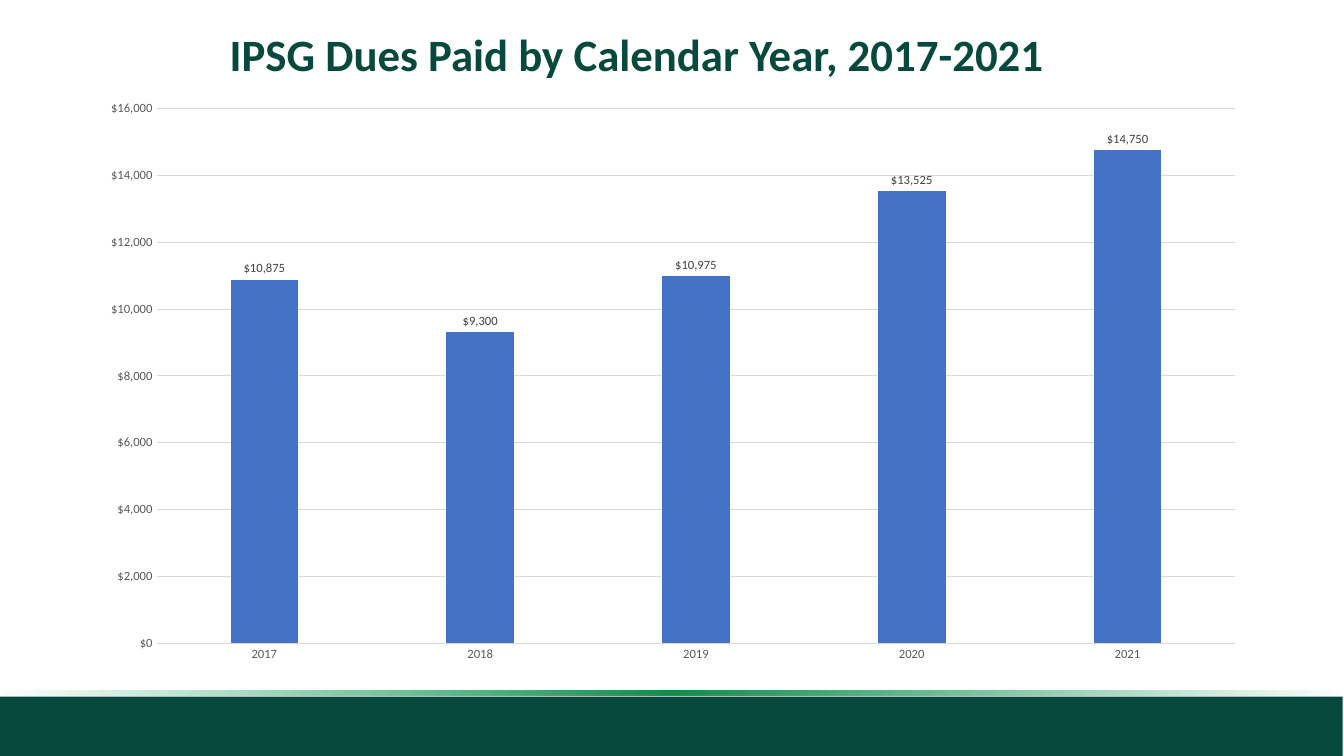
from dataclasses import dataclass
from lxml.etree import SubElement
from pptx import Presentation
from pptx.chart.data import CategoryChartData as Data
from pptx.dml.color import RGBColor as Rgb
from pptx.enum.chart import XL_CHART_TYPE as Kind, XL_LABEL_POSITION as Spot, XL_TICK_MARK as Tick
from pptx.enum.shapes import MSO_SHAPE as Form
from pptx.enum.text import MSO_ANCHOR as Anchor, MSO_AUTO_SIZE as Fit, PP_ALIGN as Align
from pptx.oxml.ns import qn
from pptx.util import Pt


@dataclass(frozen=True)
class Theme:
    face: str = "Calibri"
    dark: str = "07493C"
    bar: str = "4472C4"
    grid: str = "D9D9D9"
    axis: str = "595959"
    label: str = "404040"
    glow: tuple = ((0, "0D9D4F", 0), (50, "0C9049", 100), (100, "0FAB56", 0))
    head: int = 32
    base: int = 10
    small: int = 9


def put(item, **values):
    for name, value in values.items():
        setattr(item, name, value)


class Deck:
    def __init__(self, theme):
        self.theme = theme
        self.file = Presentation()
        put(self.file, slide_width=Pt(960), slide_height=Pt(540))
        self.slide = self.file.slides.add_slide(self.file.slide_layouts[5])

    def font(self, font, size, color, bold=False):
        put(font, name=self.theme.face, size=Pt(size), bold=bold)
        font.color.rgb = Rgb.from_string(color)

    def line(self, line, color):
        line.width = Pt(0.75)
        line.color.rgb = Rgb.from_string(color)

    def rect(self, box):
        shape = self.slide.shapes.add_shape(Form.RECTANGLE, *map(Pt, box))
        shape.shadow.inherit = False
        shape.line.fill.background()
        return shape

    def band(self, box, color):
        fill = self.rect(box).fill
        fill.solid()
        fill.fore_color.rgb = Rgb.from_string(color)

    def fade(self, box, stops):
        shape = self.rect(box)
        shape.fill.gradient()
        shape.fill.gradient_angle = 180
        root = next(shape.element.iter(qn("a:gsLst")))
        for old in list(root):
            root.remove(old)
        for place, color, alpha in stops:
            stop = SubElement(root, qn("a:gs"), pos=str(place * 1000))
            tint = SubElement(stop, qn("a:srgbClr"), val=color)
            SubElement(tint, qn("a:alpha"), val=str(alpha * 1000))

    def title(self, box, text):
        shape = self.slide.shapes.title
        put(shape, **dict(zip(("left", "top", "width", "height"), map(Pt, box))))
        frame = shape.text_frame
        put(frame, text=text, word_wrap=True, auto_size=Fit.NONE, vertical_anchor=Anchor.MIDDLE)
        line = frame.paragraphs[0]
        put(line, alignment=Align.CENTER, line_spacing=0.9)
        self.font(line.runs[0].font, self.theme.head, self.theme.dark, True)

    def chart(self, box, name, points, code):
        theme = self.theme
        data = Data(number_format=code)
        data.categories = list(points)
        data.add_series(name, points.values())
        chart = self.slide.shapes.add_chart(Kind.COLUMN_CLUSTERED, *map(Pt, box), data).chart
        put(chart, has_legend=False, has_title=False)
        self.font(chart.font, theme.base, "000000")
        for axis in (chart.category_axis, chart.value_axis):
            put(axis, major_tick_mark=Tick.NONE, minor_tick_mark=Tick.NONE)
            self.font(axis.tick_labels.font, theme.small, theme.axis)
        self.line(chart.category_axis.format.line, theme.grid)
        value = chart.value_axis
        put(value, minimum_scale=0, maximum_scale=16000, major_unit=2000, has_major_gridlines=True)
        put(value.tick_labels, number_format=code, number_format_is_linked=False)
        value.format.line.fill.background()
        self.line(value.major_gridlines.format.line, theme.grid)
        plot = chart.plots[0]
        put(plot, gap_width=219, overlap=-27, vary_by_categories=False, has_data_labels=True)
        labels = plot.data_labels
        put(labels, show_value=True, position=Spot.OUTSIDE_END,
            number_format=code, number_format_is_linked=False)
        self.font(labels.font, theme.small, theme.label)
        fill = plot.series[0].format.fill
        fill.solid()
        fill.fore_color.rgb = Rgb.from_string(theme.bar)


def main():
    theme = Theme()
    deck = Deck(theme)
    deck.band((0, 497.5, 959, 42.5), theme.dark)
    deck.fade((0, 493, 960, 4), theme.glow)
    dues = {"2017": 10875, "2018": 9300, "2019": 10975, "2020": 13525, "2021": 14750}
    deck.chart((62.6, 64, 836.6, 417), "Series 1", dues, '"$"#,##0')
    deck.title((41, 17.3, 828, 47.5), "IPSG Dues Paid by Calendar Year, 2017-2021")
    deck.file.save("out.pptx")


if __name__ == "__main__":
    main()
